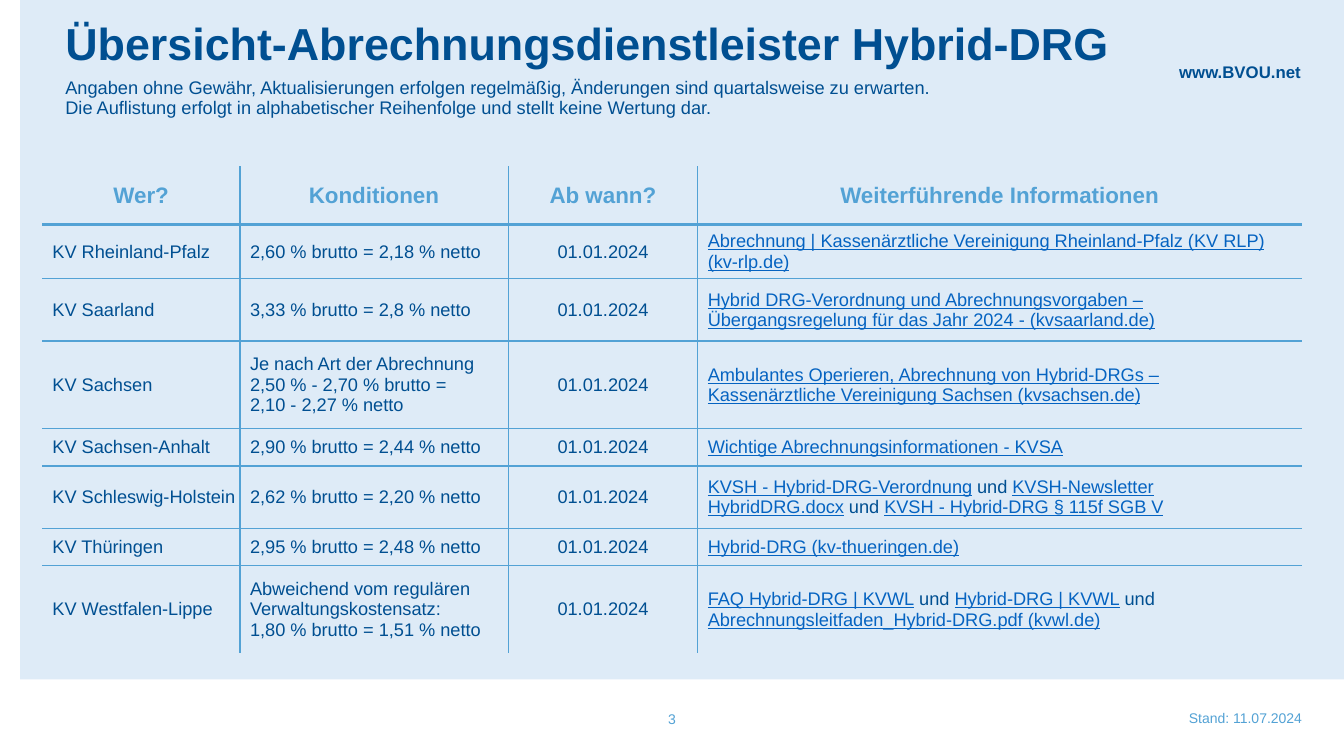
from dataclasses import dataclass

from lxml.etree import SubElement
from pptx import Presentation
from pptx.dml.color import RGBColor
from pptx.enum.shapes import MSO_SHAPE
from pptx.enum.text import MSO_ANCHOR as ANCHOR, PP_ALIGN as ALIGN
from pptx.oxml.ns import qn
from pptx.util import Pt

EMU_PER_PX = 9144  # 100 px to the inch
FONT = "Arial"
COLORS = {"panel": "DEEBF7", "navy": "004F91", "sky": "53A2D5", "link": "0563C1"}


@dataclass(frozen=True)
class Run:
    text: str
    size: int = 13
    color: str = "navy"
    bold: bool = False
    underline: bool = False


@dataclass(frozen=True)
class Para:
    runs: tuple[Run, ...]
    align: ALIGN = ALIGN.LEFT
    before: int = 0
    spacing: float = 1.0


@dataclass(frozen=True)
class Label:
    box: tuple[int, int, int, int]
    paras: tuple[Para, ...]
    anchor: ANCHOR = ANCHOR.TOP


@dataclass(frozen=True)
class Provider:
    name: str
    terms: tuple[str, ...]
    links: tuple[str, ...]
    height: int
    start: str = "01.01.2024"


LABELS = [
    Label((1089, 56, 211, 30),
          (Para((Run("www.BVOU.net", 12, bold=True),), ALIGN.RIGHT),)),
    Label((55, 17, 1172, 100), (
        Para((Run("Übersicht-Abrechnungsdienstleister Hybrid-DRG", 32, bold=True),),
             spacing=0.9),
        Para((Run("Angaben ohne Gewähr, Aktualisierungen erfolgen regelmäßig, "
                  "Änderungen sind quartalsweise zu erwarten."),), before=6, spacing=0.9),
        Para((Run("Die Auflistung erfolgt in alphabetischer Reihenfolge und "
                  "stellt keine Wertung dar."),), spacing=0.9))),
    Label((1012, 692, 289, 40),
          (Para((Run("Stand: 11.07.2024", 10, "sky"),), ALIGN.RIGHT),), ANCHOR.MIDDLE),
    Label((608, 693, 117, 40),
          (Para((Run("3", 10, "sky"),), ALIGN.CENTER),), ANCHOR.MIDDLE),
]

HEADERS = ["Wer?", "Konditionen", "Ab wann?", "Weiterführende Informationen"]
COL_WIDTHS = [196, 266, 188, 599]
HEADER_HEIGHT = 58
PROVIDERS = [
    Provider("KV Rheinland-Pfalz", ("2,60 % brutto = 2,18 % netto",),
             ("Abrechnung | Kassenärztliche Vereinigung Rheinland-Pfalz (KV RLP) "
              "(kv-rlp.de)",), 50),
    Provider("KV Saarland", ("3,33 % brutto = 2,8 % netto",),
             ("Hybrid DRG-Verordnung und Abrechnungsvorgaben – Übergangsregelung "
              "für das Jahr 2024 - (kvsaarland.de)",), 62),
    Provider("KV Sachsen", ("Je nach Art der Abrechnung", "2,50 % - 2,70 % brutto =",
                            "2,10 - 2,27 % netto"),
             ("Ambulantes Operieren, Abrechnung von Hybrid-DRGs – Kassenärztliche "
              "Vereinigung Sachsen (kvsachsen.de)",), 87),
    Provider("KV Sachsen-Anhalt", ("2,90 % brutto = 2,44 % netto",),
             ("Wichtige Abrechnungsinformationen - KVSA",), 37),
    Provider("KV Schleswig-Holstein", ("2,62 % brutto = 2,20 % netto",),
             ("KVSH - Hybrid-DRG-Verordnung", "KVSH-Newsletter HybridDRG.docx",
              "KVSH - Hybrid-DRG § 115f SGB V"), 62),
    Provider("KV Thüringen", ("2,95 % brutto = 2,48 % netto",),
             ("Hybrid-DRG (kv-thueringen.de)",), 37),
    Provider("KV Westfalen-Lippe", ("Abweichend vom regulären Verwaltungskostensatz:",
                                    "1,80 % brutto = 1,51 % netto"),
             ("FAQ Hybrid-DRG | KVWL", "Hybrid-DRG | KVWL",
              "Abrechnungsleitfaden_Hybrid-DRG.pdf (kvwl.de)"), 87),
]


def px(value: int) -> int:
    return value * EMU_PER_PX


def rgb(name: str) -> RGBColor:
    return RGBColor.from_string(COLORS[name])


def write(tf, paras: tuple[Para, ...]) -> None:
    for i, para in enumerate(paras):
        p = tf.add_paragraph() if i else tf.paragraphs[0]
        p.alignment, p.line_spacing = para.align, para.spacing
        if para.before:
            p.space_before = Pt(para.before)
        for run in para.runs:
            r = p.add_run()
            r.text = run.text
            r.font.name, r.font.size = FONT, Pt(run.size)
            r.font.bold, r.font.underline = run.bold, run.underline
            r.font.color.rgb = rgb(run.color)


def add_label(slide, label: Label) -> None:
    tf = slide.shapes.add_textbox(*map(px, label.box)).text_frame
    tf.word_wrap = True
    tf.vertical_anchor = label.anchor
    write(tf, label.paras)


def set_border(cell, side: str, width: float) -> None:
    """Draw one cell border; a width of 0 hides it."""
    ln = SubElement(cell._tc.get_or_add_tcPr(), qn(f"a:ln{side}"), w=str(Pt(width)))
    if width:
        fill = SubElement(ln, qn("a:solidFill"))
        SubElement(fill, qn("a:srgbClr"), val=COLORS["sky"])
    else:
        SubElement(ln, qn("a:noFill"))


def link_runs(links: tuple[str, ...]) -> tuple[Run, ...]:
    runs = []
    for link in links:
        if runs:
            runs.append(Run(" und "))
        runs.append(Run(link, color="link", underline=True))
    return tuple(runs)


def provider_cells(item: Provider) -> list[tuple[Para, ...]]:
    return [(Para((Run(item.name),)),),
            tuple(Para((Run(line),)) for line in item.terms),
            (Para((Run(item.start),), ALIGN.CENTER),),
            (Para(link_runs(item.links)),)]


def add_provider_table(slide, left: int, top: int) -> None:
    heights = [HEADER_HEIGHT] + [item.height for item in PROVIDERS]
    rows = [[(Para((Run(text, 16, "sky", True),), ALIGN.CENTER),) for text in HEADERS]]
    rows += [provider_cells(item) for item in PROVIDERS]
    table = slide.shapes.add_table(len(rows), len(HEADERS), px(left), px(top),
                                   px(sum(COL_WIDTHS)), px(sum(heights))).table
    table.first_row = table.horz_banding = False
    for column, width in zip(table.columns, COL_WIDTHS):
        column.width = px(width)
    for row, height in zip(table.rows, heights):
        row.height = px(height)

    # Only inner rules; the one under the header is heavier
    row_rules = [0, 2.25] + [1] * (len(rows) - 2) + [0]
    col_rules = [0] + [1] * (len(HEADERS) - 1) + [0]
    for i, row in enumerate(rows):
        for j, paras in enumerate(row):
            cell = table.cell(i, j)
            cell.vertical_anchor = ANCHOR.MIDDLE
            if i and j == 0:
                cell.margin_right = 0
            write(cell.text_frame, paras)
            for side, width in (("L", col_rules[j]), ("R", col_rules[j + 1]),
                                ("T", row_rules[i]), ("B", row_rules[i + 1])):
                set_border(cell, side, width)
            cell.fill.background()


def main() -> None:
    prs = Presentation()
    prs.slide_width, prs.slide_height = px(1333), px(750)
    slide = prs.slides.add_slide(prs.slide_layouts[6])

    # Pale panel behind the content
    panel = slide.shapes.add_shape(MSO_SHAPE.RECTANGLE, px(20), 0, px(1313), px(674))
    panel.shadow.inherit = False
    panel.fill.solid()
    panel.fill.fore_color.rgb = rgb("panel")
    panel.line.fill.background()

    # Heading, footer and table
    for label in LABELS:
        add_label(slide, label)
    add_provider_table(slide, 42, 165)
    prs.save("out.pptx")


if __name__ == "__main__":
    main()
